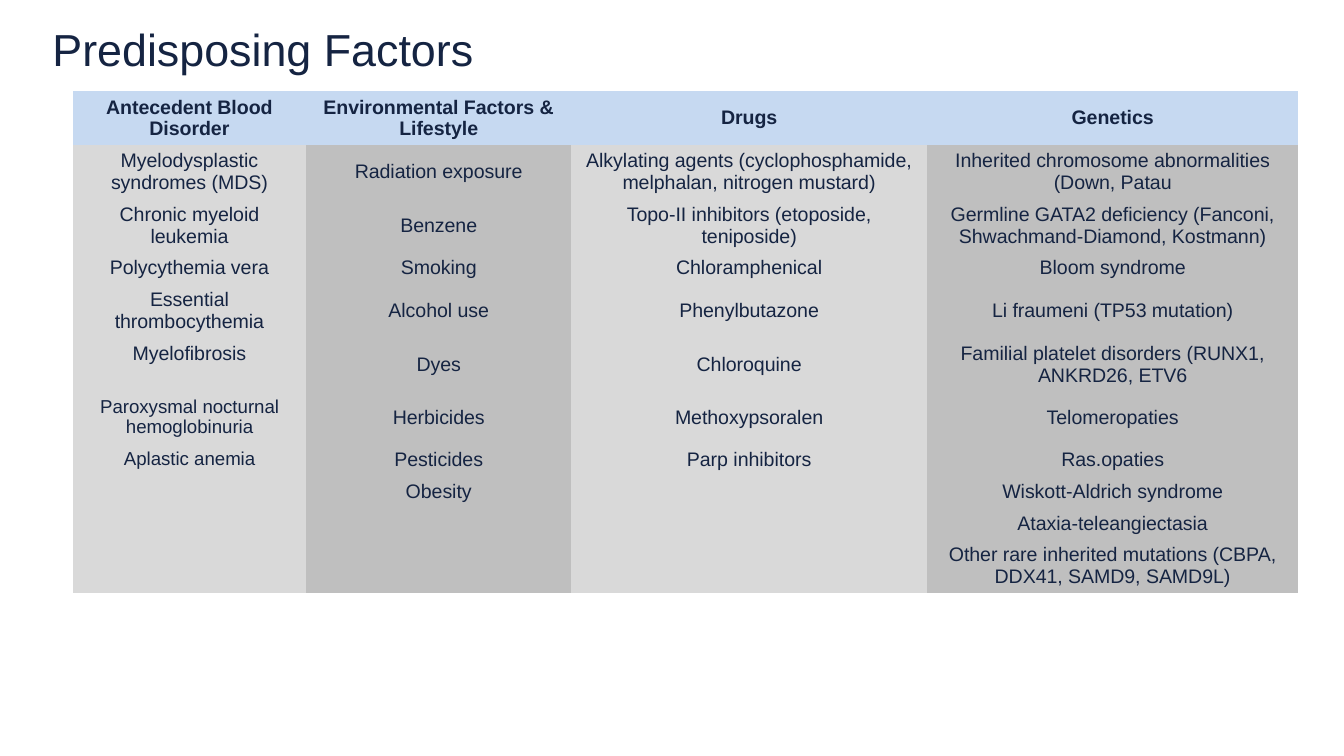
from itertools import zip_longest

from pptx import Presentation
from pptx.dml.color import RGBColor
from pptx.enum import text
from pptx.util import Inches, Pt

NAVY = RGBColor(0x15, 0x24, 0x42)
HEADER_BLUE = RGBColor(0xC6, 0xD9, 0xF1)
LIGHT_GRAY = RGBColor(0xD9, 0xD9, 0xD9)
MID_GRAY = RGBColor(0xBF, 0xBF, 0xBF)
NO_STYLE = "{2D5ABB26-0587-4C30-8999-92F81FD0307C}"

FACTORS = {
    "Antecedent Blood Disorder": [
        "Myelodysplastic syndromes (MDS)", "Chronic myeloid leukemia",
        "Polycythemia vera", "Essential thrombocythemia", "Myelofibrosis",
        "Paroxysmal nocturnal hemoglobinuria", "Aplastic anemia",
    ],
    "Environmental Factors & Lifestyle": [
        "Radiation exposure", "Benzene", "Smoking", "Alcohol use", "Dyes",
        "Herbicides", "Pesticides", "Obesity",
    ],
    "Drugs": [
        "Alkylating agents (cyclophosphamide, melphalan, nitrogen mustard)",
        "Topo-II inhibitors (etoposide, teniposide)", "Chloramphenical",
        "Phenylbutazone", "Chloroquine", "Methoxypsoralen", "Parp inhibitors",
    ],
    "Genetics": [
        "Inherited chromosome abnormalities (Down, Patau",
        "Germline GATA2 deficiency (Fanconi, Shwachmand-Diamond, Kostmann)",
        "Bloom syndrome", "Li fraumeni (TP53 mutation)",
        "Familial platelet disorders (RUNX1, ANKRD26, ETV6", "Telomeropaties",
        "Ras.opaties", "Wiskott-Aldrich syndrome", "Ataxia-teleangiectasia",
        "Other rare inherited mutations (CBPA, DDX41, SAMD9, SAMD9L)",
    ],
}
COL_WIDTHS = [1.74, 1.97, 2.65, 2.76]
ROW_HEIGHTS = [0.25, 0.29, 0.27, 0.16, 0.27, 0.16, 0.39, 0.16, 0.16, 0.16, 0.16]
SMALL_TEXT_ROWS = {6, 7}


def format_font(font, size, bold=False):
    font.name = "Arial"
    font.size = Pt(size)
    font.bold = bold
    font.color.rgb = NAVY


def add_title(s, title):
    sp = s.shapes.title
    sp.left, sp.top, sp.width, sp.height = map(Inches, (0.29, 0.14, 7.57, 0.44))
    tf = sp.text_frame
    tf.text = title
    tf.vertical_anchor = text.MSO_ANCHOR.MIDDLE
    p = tf.paragraphs[0]
    p.alignment = text.PP_ALIGN.LEFT
    format_font(p.font, 24)


def fill_cell(cell, value, row, col):
    header = row == 0
    cell.fill.solid()
    cell.fill.fore_color.rgb = HEADER_BLUE if header else (LIGHT_GRAY, MID_GRAY)[col % 2]
    cell.margin_left = cell.margin_right = Pt(5.4)
    cell.margin_top = cell.margin_bottom = Pt(2.7)
    top = col == 0 and not header
    cell.vertical_anchor = text.MSO_ANCHOR.TOP if top else text.MSO_ANCHOR.MIDDLE
    p = cell.text_frame.paragraphs[0]
    p.alignment = text.PP_ALIGN.CENTER
    size = 10 if col == 0 and row in SMALL_TEXT_ROWS else 10.5
    format_font(p.font, size, header)
    if value:
        p.add_run().text = value
    else:
        p._p.get_or_add_endParaRPr().set("sz", "1050")


def add_factor_table(s):
    rows = [tuple(FACTORS), *zip_longest(*FACTORS.values(), fillvalue="")]
    frame = s.shapes.add_table(
        len(rows), len(COL_WIDTHS), Inches(0.54), Inches(0.68),
        Inches(sum(COL_WIDTHS)), Inches(3.96))
    table = frame.table
    table.first_row = table.horz_banding = False
    table._tbl.tblPr.find("{*}tableStyleId").text = NO_STYLE
    for column, width in zip(table.columns, COL_WIDTHS):
        column.width = Inches(width)
    for i, values in enumerate(rows):
        table.rows[i].height = Inches(ROW_HEIGHTS[i])
        for j, value in enumerate(values):
            fill_cell(table.cell(i, j), value, i, j)
    frame.height = Inches(3.96)


def main():
    prs = Presentation()
    prs.slide_width = Inches(10)
    prs.slide_height = prs.slide_width * 9 // 16
    s = prs.slides.add_slide(prs.slide_layouts[5])
    add_title(s, "Predisposing Factors")
    add_factor_table(s)
    prs.save("out.pptx")


if __name__ == "__main__":
    main()
